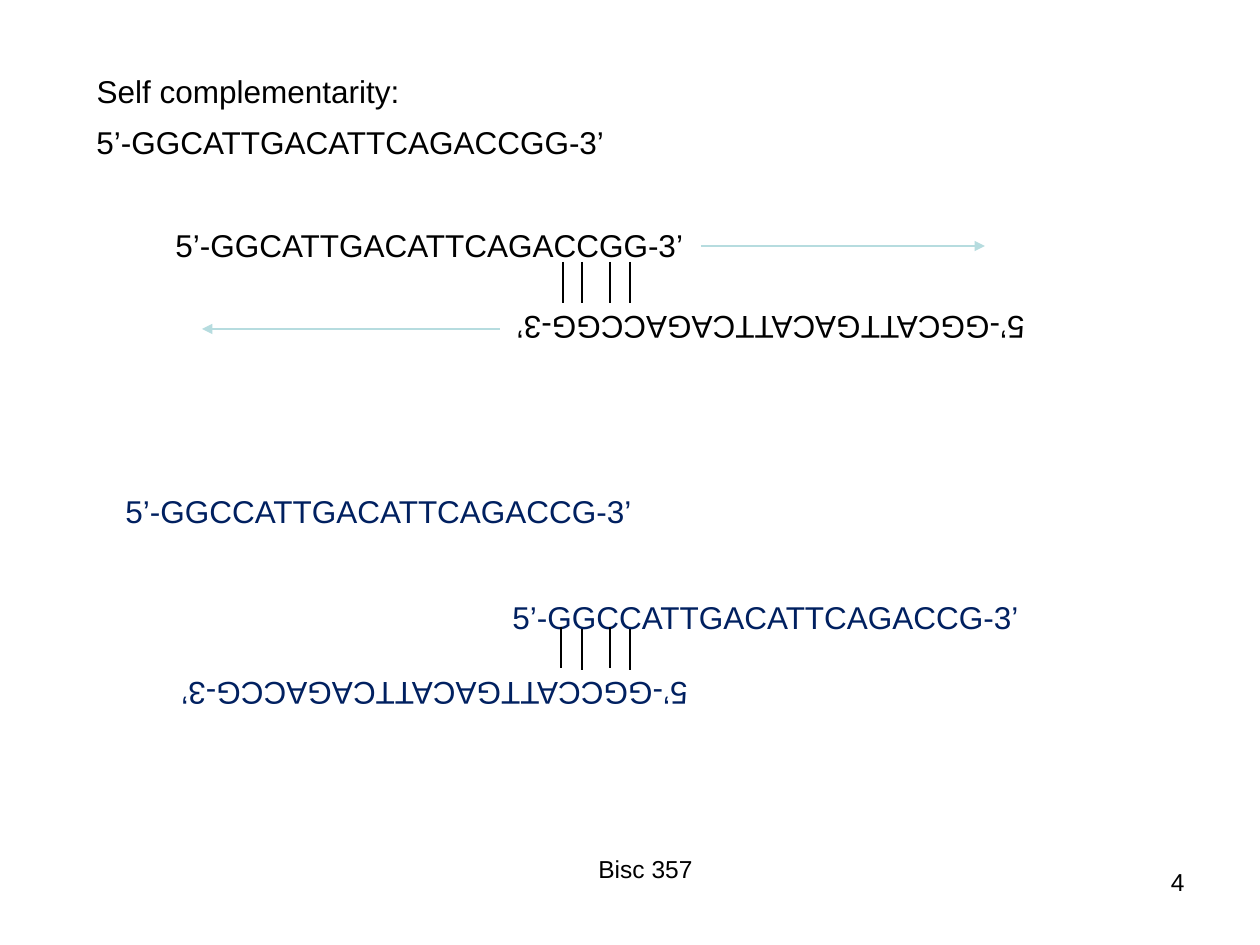
from lxml.etree import SubElement
from pptx import Presentation
from pptx.dml.color import RGBColor
from pptx.enum.shapes import MSO_CONNECTOR
from pptx.enum.text import MSO_ANCHOR, MSO_AUTO_SIZE, PP_ALIGN
from pptx.oxml.ns import qn
from pptx.util import Pt

PX = 914400 / 126
BLACK = RGBColor(0, 0, 0)
NAVY = RGBColor(0x00, 0x20, 0x60)
TEAL = RGBColor(0xB6, 0xDC, 0xDF)

HEADING = "Self complementarity:"
FIRST_PRIMER = "5’-GGCATTGACATTCAGACCGG-3’"
SECOND_PRIMER = "5’-GGCCATTGACATTCAGACCG-3’"
BOND_LENGTH = 41

DIMERS = [
    dict(primer=FIRST_PRIMER, color=BLACK, width=538,
         strands=[(163, 220, 0), (499, 304, 180)],
         bonds=[(563, 262), (582, 262), (610, 262), (630, 262)],
         arrows=[(701, 985, 246), (500, 202, 329)]),
    dict(primer=SECOND_PRIMER, color=NAVY, width=537,
         strands=[(113, 486, 0), (500, 592, 0), (163, 670, 180)],
         bonds=[(561, 627), (582, 629), (610, 627), (630, 629)],
         arrows=[]),
]


def px(*lengths):
    return [round(length * PX) for length in lengths]


def write(box, text, size=18, color=BLACK, align=PP_ALIGN.LEFT, wrap=False):
    frame = box.text_frame
    frame.text = text
    frame.word_wrap = wrap
    frame.auto_size = MSO_AUTO_SIZE.NONE if wrap else MSO_AUTO_SIZE.SHAPE_TO_FIT_TEXT
    frame.vertical_anchor = MSO_ANCHOR.TOP
    paragraph = frame.paragraphs[0]
    paragraph.alignment = align
    font = paragraph.runs[0].font
    font.name, font.size, font.color.rgb = "Arial", Pt(size), color


def draw_line(shapes, x1, y1, x2, y2, color=BLACK, arrow=False):
    line = shapes.add_connector(MSO_CONNECTOR.STRAIGHT, *px(x1, y1, x2, y2))
    line.line.color.rgb = color
    line.line.width = Pt(0.75)
    if arrow:
        SubElement(line.line._get_or_add_ln(), qn("a:tailEnd"), type="triangle")
    SubElement(line._element.spPr, qn("a:effectLst"))


def draw_dimer(shapes, primer, color, width, strands, bonds, arrows):
    for left, top, rotation in strands:
        strand = shapes.add_textbox(*px(left, top, width, 50))
        write(strand, primer, color=color)
        strand.rotation = rotation
    for x, top in bonds:
        draw_line(shapes, x, top, x, top + BOND_LENGTH)
    for start, end, y in arrows:
        draw_line(shapes, start, y, end, y, TEAL, arrow=True)


def main():
    deck = Presentation()
    deck.slide_width, deck.slide_height = px(1260, 945)
    slide = deck.slides.add_slide(deck.slide_layouts[5])
    shapes = slide.shapes

    heading = shapes.title
    heading.left, heading.top, heading.width, heading.height = px(84, 66, 331, 50)
    write(heading, HEADING)
    write(shapes.add_textbox(*px(84, 117, 538, 50)), FIRST_PRIMER)

    for dimer in DIMERS:
        draw_dimer(shapes.add_group_shape().shapes, **dimer)

    course = shapes.add_textbox(*px(446, 848, 399, 66))
    write(course, "Bisc 357", size=14, align=PP_ALIGN.CENTER, wrap=True)
    page_number = shapes.add_textbox(*px(903, 861, 294, 66))
    write(page_number, "4", size=14, align=PP_ALIGN.RIGHT, wrap=True)

    deck.save("out.pptx")


if __name__ == "__main__":
    main()
